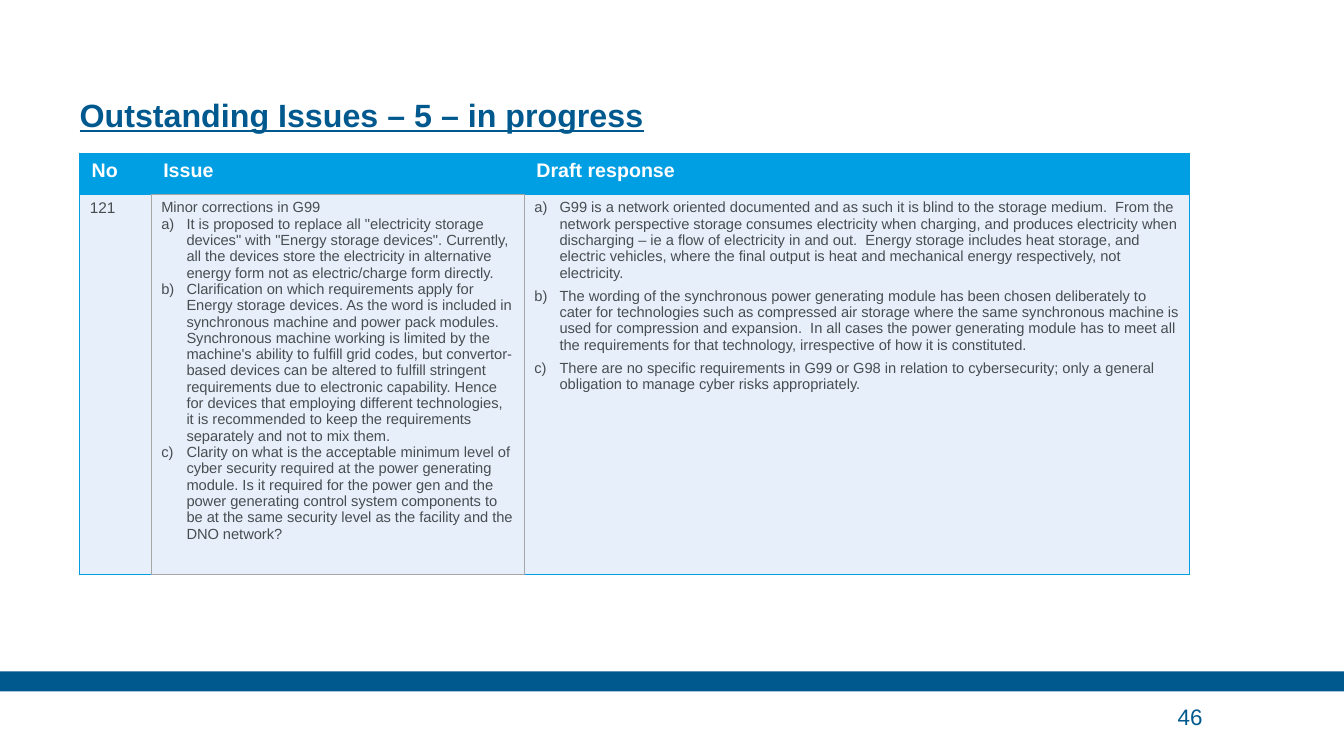
from lxml import etree
from pptx import Presentation
from pptx.dml.color import RGBColor
from pptx.enum.shapes import MSO_SHAPE
from pptx.enum.text import MSO_ANCHOR
from pptx.oxml.ns import qn
from pptx.util import Inches, Pt

NAVY = RGBColor(0x00, 0x59, 0x8E)
CYAN = RGBColor(0x00, 0x9F, 0xE3)
PALE = RGBColor(0xE7, 0xF0, 0xFA)
GREY = RGBColor(0xA6, 0xA6, 0xA6)
TEXT = RGBColor(0x48, 0x4D, 0x51)
WHITE = RGBColor(0xFF, 0xFF, 0xFF)
RECTANGLE = MSO_SHAPE.RECTANGLE
BOTTOM, MIDDLE = MSO_ANCHOR.BOTTOM, MSO_ANCHOR.MIDDLE

# Content
TITLE = "Outstanding Issues – 5 – in progress"
PAGE_NUMBER = "46"
HEADERS = ["No", "Issue", "Draft response"]
ISSUE_NUMBER = "121"
ISSUE_INTRO = "Minor corrections in G99"
ISSUES = [
    'It is proposed to replace all "electricity storage devices" with "Energy storage '
    'devices". Currently, all the devices store the electricity in alternative energy '
    "form not as electric/charge form directly.",
    "Clarification on which requirements apply for Energy storage devices. As the word is "
    "included in synchronous machine and power pack modules. Synchronous machine working "
    "is limited by the machine's ability to fulfill grid codes, but convertor-based "
    "devices can be altered to fulfill stringent requirements due to electronic "
    "capability. Hence for devices that employing different technologies, it is "
    "recommended to keep the requirements separately and not to mix them.",
    "Clarity on what is the acceptable minimum level of cyber security required at the "
    "power generating module. Is it required for the power gen and the power generating "
    "control system components to be at the same security level as the facility and the "
    "DNO network?",
]
RESPONSES = [
    "G99 is a network oriented documented and as such it is blind to the storage medium.  "
    "From the network perspective storage consumes electricity when charging, and "
    "produces electricity when discharging – ie a flow of electricity in and out.  Energy "
    "storage includes heat storage, and electric vehicles, where the final output is heat "
    "and mechanical energy respectively, not electricity.",
    "The wording of the synchronous power generating module has been chosen deliberately "
    "to cater for technologies such as compressed air storage where the same synchronous "
    "machine is used for compression and expansion.  In all cases the power generating "
    "module has to meet all the requirements for that technology, irrespective of how it "
    "is constituted.",
    "There are no specific requirements in G99 or G98 in relation to cybersecurity; only a "
    "general obligation to manage cyber risks appropriately.",
]
COLUMN_WIDTHS = [0.71, 3.7, 6.6]
ROW_HEIGHTS = [0.41, 3.66]
# Border colours per cell: left, right, top, bottom
BORDERS = [
    [(CYAN, CYAN, CYAN, CYAN), (CYAN, CYAN, CYAN, GREY), (CYAN, CYAN, CYAN, CYAN)],
    [(CYAN, GREY, CYAN, CYAN), (GREY, GREY, GREY, GREY), (GREY, CYAN, CYAN, CYAN)],
]


def add_run(paragraph, text, size, color, bold=False):
    run = paragraph.add_run()
    run.text = text
    run.font.name = "Arial"
    run.font.size = Pt(size)
    run.font.bold = bold
    run.font.color.rgb = color
    return run


def clear_margins(frame):
    frame.margin_left = frame.margin_right = frame.margin_top = frame.margin_bottom = 0


def letter_paragraph(paragraph):
    properties = paragraph._p.get_or_add_pPr()
    properties.set("marL", str(Inches(0.25)))
    properties.set("indent", str(Inches(-0.25)))
    etree.SubElement(properties, qn("a:buFont"), typeface="+mj-lt")
    etree.SubElement(properties, qn("a:buAutoNum"), type="alphaLcParenR")


def fill_cell(cell, items, size, color, bold=False, space_after=0):
    """Write (text, is_lettered) items, one paragraph each."""
    frame = cell.text_frame
    for index, (text, is_lettered) in enumerate(items):
        paragraph = frame.add_paragraph() if index else frame.paragraphs[0]
        if is_lettered:
            letter_paragraph(paragraph)
        if space_after:
            paragraph.space_after = Pt(space_after)
        add_run(paragraph, text, size, color, bold)


def set_borders(cell, colors):
    properties = cell._tc.get_or_add_tcPr()
    for index, (side, color) in enumerate(zip("LRTB", colors)):
        line = etree.Element(qn(f"a:ln{side}"), w=str(Pt(1)))
        solid = etree.SubElement(line, qn("a:solidFill"))
        etree.SubElement(solid, qn("a:srgbClr"), val=str(color))
        properties.insert(index, line)


def main():
    presentation = Presentation()
    presentation.slide_width, presentation.slide_height = Inches(13.33), Inches(7.5)
    slide = presentation.slides.add_slide(presentation.slide_layouts[5])

    # Footer bar
    bar = slide.shapes.add_shape(
        RECTANGLE, 0, Inches(6.66), presentation.slide_width, Inches(0.2))
    bar.shadow.inherit = False
    bar.fill.solid()
    bar.fill.fore_color.rgb = NAVY
    bar.line.fill.background()

    # Title
    title = slide.shapes.title
    title.left, title.top = Inches(0.79), Inches(0.31)
    title.width, title.height = Inches(9.84), Inches(1.02)
    clear_margins(title.text_frame)
    title.text_frame.vertical_anchor = BOTTOM
    paragraph = title.text_frame.paragraphs[0]
    paragraph._p.get_or_add_pPr().set("algn", "l")
    paragraph.line_spacing = Pt(30)
    add_run(paragraph, TITLE, 23, NAVY, bold=True).font.underline = True

    # Page number
    page = slide.shapes.add_textbox(Inches(11.68), Inches(6.91), Inches(1.23), Inches(0.39))
    clear_margins(page.text_frame)
    page.text_frame.word_wrap = True
    page.text_frame.vertical_anchor = MIDDLE
    add_run(page.text_frame.paragraphs[0], PAGE_NUMBER, 16, NAVY)

    # Issues table
    table = slide.shapes.add_table(
        len(ROW_HEIGHTS), len(COLUMN_WIDTHS), Inches(0.79), Inches(1.52),
        Inches(sum(COLUMN_WIDTHS)), Inches(sum(ROW_HEIGHTS))).table
    for column, width in zip(table.columns, COLUMN_WIDTHS):
        column.width = Inches(width)
    for row, height in zip(table.rows, ROW_HEIGHTS):
        row.height = Inches(height)

    for row_index, fill in enumerate((CYAN, PALE)):
        for column_index, colors in enumerate(BORDERS[row_index]):
            cell = table.cell(row_index, column_index)
            cell.fill.solid()
            cell.fill.fore_color.rgb = fill
            set_borders(cell, colors)

    for column_index, header in enumerate(HEADERS):
        cell = table.cell(0, column_index)
        cell.margin_left = cell.margin_right = Inches(0.12)
        cell.margin_top = cell.margin_bottom = Inches(0.06)
        fill_cell(cell, [(header, False)], 14, WHITE, bold=True)

    issue_items = [(ISSUE_INTRO, False)] + [(text, True) for text in ISSUES]
    response_items = [(text, True) for text in RESPONSES]
    fill_cell(table.cell(1, 0), [(ISSUE_NUMBER, False)], 11, TEXT)
    fill_cell(table.cell(1, 1), issue_items, 10.5, TEXT)
    fill_cell(table.cell(1, 2), response_items, 10.5, TEXT, space_after=5)

    presentation.save("out.pptx")


if __name__ == "__main__":
    main()
